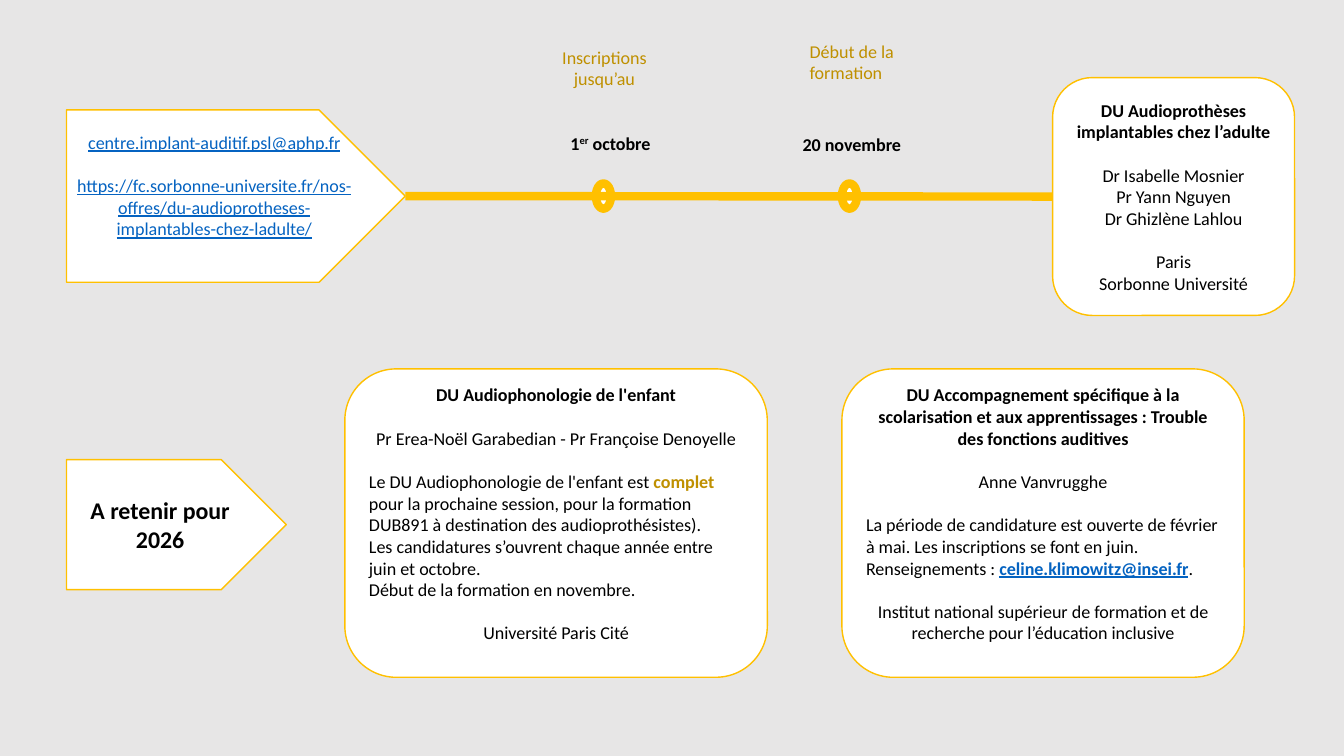
from lxml.etree import SubElement
from pptx import Presentation
from pptx.dml.color import RGBColor
from pptx.enum.shapes import MSO_CONNECTOR, MSO_SHAPE
from pptx.enum.text import MSO_ANCHOR, PP_ALIGN
from pptx.oxml.ns import qn
from pptx.util import Inches, Pt

COLORS = {"background": "E7E6E6", "accent": "FFC000", "card": "FFFFFF",
          "text": "000000", "gold": "BF9000", "link": "0563C1"}
FONT, BODY_SIZE, HEADING_SIZE, BLANK_LINE = "Calibri", 12.9, 17.1, 15.4
CENTER, LEFT = PP_ALIGN.CENTER, PP_ALIGN.LEFT
TOP, MIDDLE = MSO_ANCHOR.TOP, MSO_ANCHOR.MIDDLE

PLAIN = {}
BOLD = {"bold": True}
GOLD = {"color": "gold"}
LINK = {"color": "link", "underline": True}

# paragraph: alignment, blank lines before, runs
ADULT_COURSE = [
    (CENTER, 0, [("DU Audioprothèses implantables chez l’adulte", BOLD)]),
    (CENTER, 1, [("Dr Isabelle Mosnier\nPr Yann Nguyen\nDr Ghizlène Lahlou", PLAIN)]),
    (CENTER, 1, [("Paris\nSorbonne Université", PLAIN)]),
]
CONTACT = [
    (CENTER, 0, [("centre.implant-auditif.psl@aphp.fr", LINK)]),
    (CENTER, 1, [("https://fc.sorbonne-universite.fr/nos-offres/"
                  "du-audioprotheses-implantables-chez-ladulte/", LINK)]),
]
REMINDER = [(CENTER, 0, [("A retenir pour 2026", {"bold": True, "size": HEADING_SIZE})])]
CHILD_COURSE = [
    (CENTER, 0, [("DU Audiophonologie de l'enfant", BOLD)]),
    (CENTER, 1, [("Pr Erea-Noël Garabedian - Pr Françoise Denoyelle", PLAIN)]),
    (LEFT, 1, [("Le DU Audiophonologie de l'enfant est ", PLAIN),
               ("complet", {"color": "gold", "bold": True}),
               (" pour la prochaine session, pour la formation DUB891 "
                "à destination des audioprothésistes).", PLAIN)]),
    (LEFT, 0, [("Les candidatures s’ouvrent chaque année entre juin et octobre.", PLAIN)]),
    (LEFT, 0, [("Début de la formation en novembre.", PLAIN)]),
    (CENTER, 1, [("Université Paris Cité", PLAIN)]),
]
SCHOOL_COURSE = [
    (CENTER, 0, [("DU Accompagnement spécifique à la scolarisation et aux "
                  "apprentissages : Trouble des fonctions auditives", BOLD)]),
    (CENTER, 1, [("Anne Vanvrugghe", PLAIN)]),
    (LEFT, 1, [("La période de candidature est ouverte de février à mai. "
                "Les inscriptions se font en juin. Renseignements : ", PLAIN),
               ("celine.klimowitz@insei.fr", {**LINK, "bold": True}),
               (".", PLAIN)]),
    (CENTER, 1, [("Institut national supérieur de formation et de recherche "
                  "pour l’éducation inclusive", PLAIN)]),
]

# name: preset, box, anchor, top margin, bottom margin, paragraphs
CARDS = {
    "adult": (MSO_SHAPE.ROUNDED_RECTANGLE, (10.44, 0.77, 2.4, 2.36), MIDDLE, 0.05, 0.05, ADULT_COURSE),
    "contact": (MSO_SHAPE.PENTAGON, (0.66, 1.09, 3.36, 1.71), MIDDLE, 0.05, 0.26, CONTACT),
    "reminder": (MSO_SHAPE.PENTAGON, (0.66, 4.56, 2.18, 1.29), MIDDLE, 0.05, 0.05, REMINDER),
    "child": (MSO_SHAPE.ROUNDED_RECTANGLE, (3.42, 3.66, 4.19, 3.06), TOP, 0, 0, CHILD_COURSE),
    "school": (MSO_SHAPE.ROUNDED_RECTANGLE, (8.35, 3.66, 3.99, 3.06), TOP, 0, 0, SCHOOL_COURSE),
}
LABELS = [
    ((5.43, 0.41, 1.13, 0.53), [(CENTER, 0, [("Inscriptions\njusqu’au", GOLD)])]),
    ((5.49, 1.26, 1.13, 0.32), [(CENTER, 0, [("1", BOLD), ("er", {"bold": True, "raised": True}),
                                             (" octobre", BOLD)])]),
    ((7.94, 0.35, 1.13, 0.53), [(LEFT, 0, [("Début de la formation", GOLD)])]),
    ((7.87, 1.27, 1.32, 0.32), [(LEFT, 0, [("20 novembre", BOLD)])]),
]
MILESTONES = [5.91, 8.35]


def color(name):
    return RGBColor.from_string(COLORS[name])


def add_run(paragraph, text, style):
    for index, part in enumerate(text.split("\n")):
        if index:
            paragraph.add_line_break()
        run = paragraph.add_run()
        run.text = part
        formats = {"name": FONT, "size": Pt(style.get("size", BODY_SIZE)),
                   "bold": style.get("bold", False),
                   "underline": style.get("underline", False)}
        for attribute, value in formats.items():
            setattr(run.font, attribute, value)
        run.font.color.rgb = color(style.get("color", "text"))
        if style.get("raised"):
            run._r.get_or_add_rPr().set("baseline", "30000")


def write(shape, paragraphs, anchor=TOP, top=0.05, bottom=0.05):
    frame = shape.text_frame
    formats = {"word_wrap": True, "vertical_anchor": anchor,
               "margin_left": Inches(0.09), "margin_right": Inches(0.09),
               "margin_top": Inches(top), "margin_bottom": Inches(bottom)}
    for attribute, value in formats.items():
        setattr(frame, attribute, value)
    for index, (alignment, blank_lines, runs) in enumerate(paragraphs):
        paragraph = frame.add_paragraph() if index else frame.paragraphs[0]
        paragraph.alignment = alignment
        paragraph.space_before = Pt(BLANK_LINE * blank_lines)
        for text, style in runs:
            add_run(paragraph, text, style)


def add_outlined(slide, preset, box, line_width):
    shape = slide.shapes.add_shape(preset, *map(Inches, box))
    shape.shadow.inherit = False
    shape.fill.solid()
    shape.fill.fore_color.rgb = color("card")
    shape.line.color.rgb = color("accent")
    shape.line.width = Pt(line_width)
    return shape


def main():
    presentation = Presentation()
    presentation.slide_width, presentation.slide_height = Inches(13.33), Inches(7.5)
    slide = presentation.slides.add_slide(presentation.slide_layouts[6])
    slide.background.fill.solid()
    slide.background.fill.fore_color.rgb = color("background")

    for left in MILESTONES:
        add_outlined(slide, MSO_SHAPE.OVAL, (left, 1.82, 0.15, 0.25), 6)

    timeline = slide.shapes.add_connector(
        MSO_CONNECTOR.STRAIGHT, Inches(4.02), Inches(1.95), Inches(10.44), Inches(1.95))
    timeline.line.color.rgb = color("accent")
    timeline.line.width = Pt(6)
    SubElement(timeline._element.spPr, qn("a:effectLst"))

    cards = {}
    for name, (preset, box, anchor, top, bottom, paragraphs) in CARDS.items():
        cards[name] = add_outlined(slide, preset, box, 1)
        write(cards[name], paragraphs, anchor, top, bottom)
    timeline.begin_connect(cards["contact"], 3)
    timeline.end_connect(cards["adult"], 1)

    for box, paragraphs in LABELS:
        write(slide.shapes.add_textbox(*map(Inches, box)), paragraphs)

    presentation.save("out.pptx")


if __name__ == "__main__":
    main()
